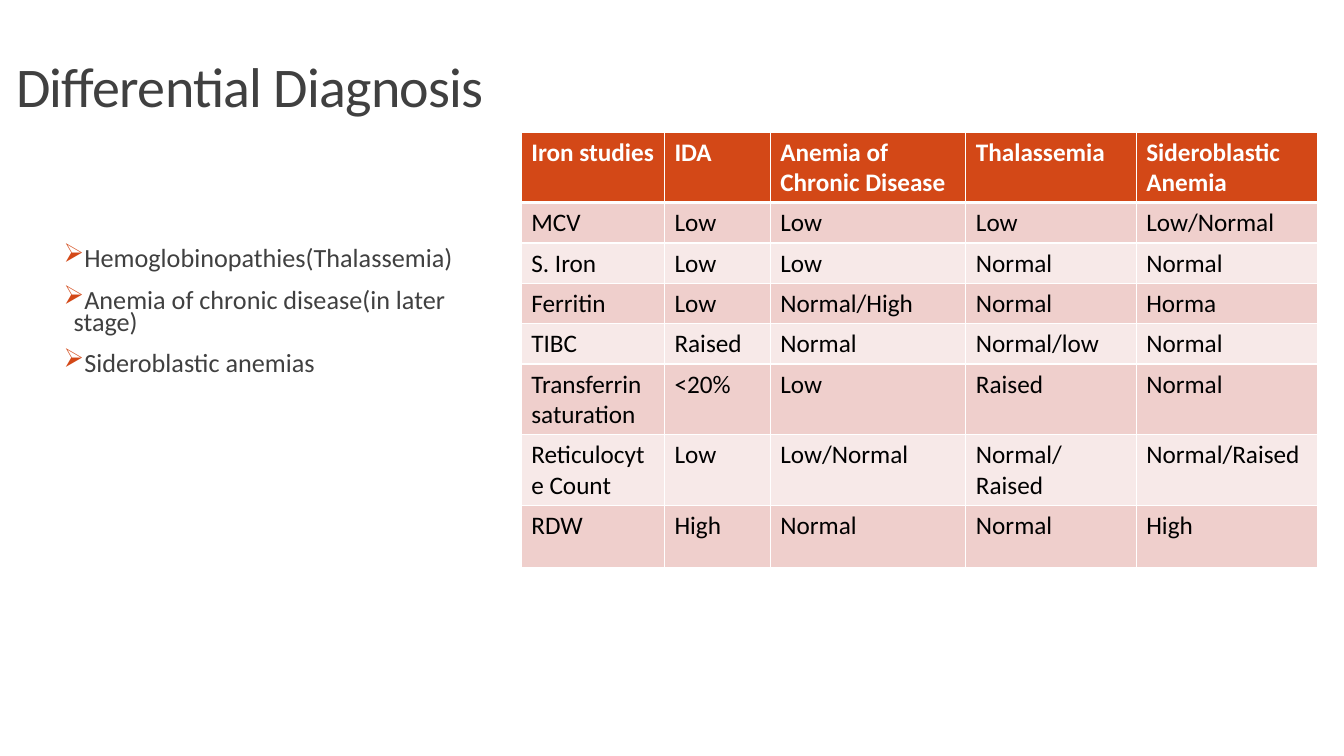
from dataclasses import dataclass

from lxml.etree import SubElement
from pptx import Presentation
from pptx.dml.color import RGBColor
from pptx.enum.text import MSO_ANCHOR, MSO_AUTO_SIZE, PP_ALIGN
from pptx.oxml.ns import qn
from pptx.util import Inches, Pt

GREY = RGBColor(0x40, 0x40, 0x40)
RUST = RGBColor(0xD3, 0x48, 0x17)
ROSE = RGBColor(0xEF, 0xCF, 0xCC)
BLUSH = RGBColor(0xF7, 0xE9, 0xE8)
WHITE = RGBColor(0xFF, 0xFF, 0xFF)
BLACK = RGBColor(0, 0, 0)
FACE = "Calibri"


@dataclass(frozen=True)
class Style:
    size: float
    color: RGBColor
    bold: bool = False


@dataclass(frozen=True)
class Row:
    height: float
    cells: tuple[str, ...]


HEAD = Style(18, WHITE, True)
DATA = Style(18, BLACK)
WIDTHS = (1.42, 1.05, 1.94, 1.69, 1.8)
ROWS = (
    Row(0.62, ("Iron studies", "IDA", "Anemia of Chronic Disease", "Thalassemia", "Sideroblastic Anemia")),
    Row(0.35, ("MCV", "Low", "Low", "Low", "Low/Normal")),
    Row(0.35, ("S. Iron", "Low", "Low", "Normal", "Normal")),
    Row(0.35, ("Ferritin", "Low", "Normal/High", "Normal", "Horma")),
    Row(0.35, ("TIBC", "Raised", "Normal", "Normal/low", "Normal")),
    Row(0.62, ("Transferrin saturation", "<20%", "Low", "Raised", "Normal")),
    Row(0.62, ("Reticulocyte Count", "Low", "Low/Normal", "Normal/Raised", "Normal/Raised")),
    Row(0.62, ("RDW", "High", "Normal", "Normal", "High")),
)
CAUSES = (
    "Hemoglobinopathies(Thalassemia)",
    "Anemia of chronic disease(in later stage)",
    "Sideroblastic anemias",
)


def add_text(para, text: str, style: Style):
    run = para.add_run()
    run.text = text
    font = run.font
    font.name, font.size, font.bold = FACE, Pt(style.size), style.bold
    font.color.rgb = style.color
    return run


def add_title(slide) -> None:
    title = slide.shapes.title
    title.left, title.top = Inches(0.06), Inches(0.3)
    title.width, title.height = Inches(5.5), Inches(0.93)
    frame = title.text_frame
    frame.word_wrap = True
    frame.auto_size = MSO_AUTO_SIZE.NONE
    frame.vertical_anchor = MSO_ANCHOR.BOTTOM
    para = frame.paragraphs[0]
    para.alignment, para.line_spacing = PP_ALIGN.LEFT, 0.85
    run = add_text(para, "Differential Diagnosis", Style(40, GREY))
    run.font._element.set("spc", "-50")


def add_bullet(para) -> None:
    props = para._p.get_or_add_pPr()
    props.set("marL", str(Inches(0.1)))
    props.set("indent", str(Inches(-0.1)))
    tint = SubElement(props, qn("a:buClr"))
    SubElement(tint, qn("a:srgbClr"), val=str(RUST))
    SubElement(props, qn("a:buChar"), char="➢")


def add_list(slide) -> None:
    box = slide.shapes.add_textbox(Inches(0.63), Inches(2.43), Inches(4.35), Inches(1.42))
    frame = box.text_frame
    frame.word_wrap = True
    frame.margin_left = frame.margin_right = 0
    for i, cause in enumerate(CAUSES):
        para = frame.add_paragraph() if i else frame.paragraphs[0]
        add_bullet(para)
        para.line_spacing = 0.7
        para.space_before = Pt(12 if i else 0)
        para.space_after = Pt(2)
        add_text(para, cause, Style(18.7, GREY))


def add_edge(cell, side: str, width: float) -> None:
    props = cell._tc.get_or_add_tcPr()
    line = SubElement(props, qn(f"a:ln{side}"), w=str(Pt(width)))
    fill = SubElement(line, qn("a:solidFill"))
    SubElement(fill, qn("a:srgbClr"), val=str(WHITE))


def add_grid(slide) -> None:
    frame = slide.shapes.add_table(
        len(ROWS), len(WIDTHS), Inches(5.17), Inches(1.31),
        Inches(sum(WIDTHS)), Inches(sum(row.height for row in ROWS)))
    grid = frame.table
    for col, width in zip(grid.columns, WIDTHS):
        col.width = Inches(width)
    for r, row in enumerate(ROWS):
        grid.rows[r].height = Inches(row.height)
        shade = RUST if r == 0 else (BLUSH, ROSE)[r % 2]
        for c, text in enumerate(row.cells):
            cell = grid.cell(r, c)
            for side in "LRTB":
                thick = (r, side) in ((0, "B"), (1, "T"))
                add_edge(cell, side, 3 if thick else 1)
            cell.fill.solid()
            cell.fill.fore_color.rgb = shade
            add_text(cell.text_frame.paragraphs[0], text, DATA if r else HEAD)


def main() -> None:
    deck = Presentation()
    deck.slide_width, deck.slide_height = Inches(13.33), Inches(7.5)
    slide = deck.slides.add_slide(deck.slide_layouts[5])
    add_title(slide)
    add_list(slide)
    add_grid(slide)
    deck.save("out.pptx")


if __name__ == "__main__":
    main()
